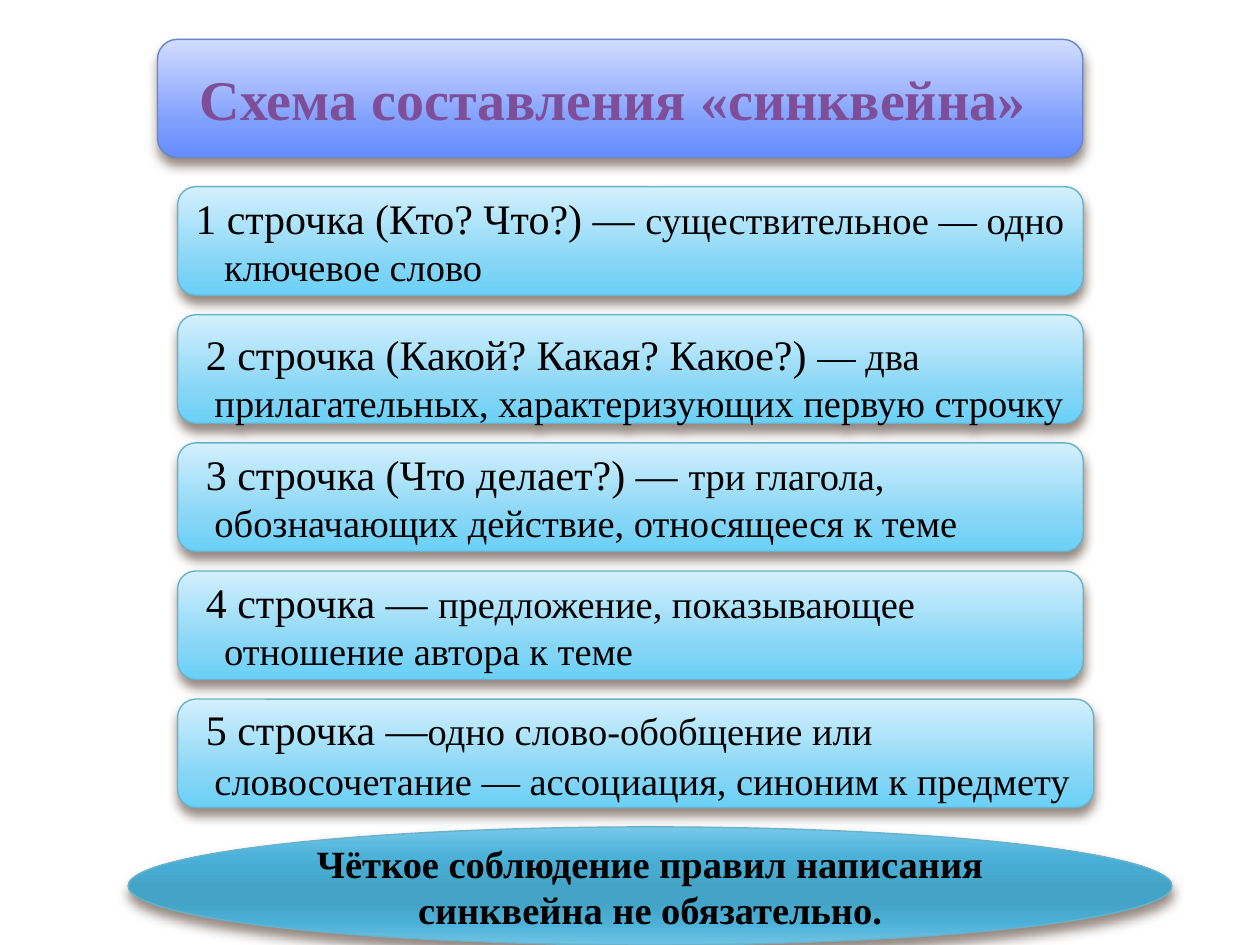
from pptx import Presentation
from pptx.dml.color import RGBColor
from pptx.enum.shapes import MSO_SHAPE
from pptx.enum.text import MSO_ANCHOR, PP_ALIGN
from pptx.oxml import parse_xml
from pptx.oxml.ns import nsdecls, qn
from pptx.util import Pt

ROUND, OVAL = MSO_SHAPE.ROUNDED_RECTANGLE, MSO_SHAPE.OVAL
MIDDLE = MSO_ANCHOR.MIDDLE
LEFT, CENTER = PP_ALIGN.LEFT, PP_ALIGN.CENTER

FONT = "Times New Roman"
BLACK = RGBColor(0x00, 0x00, 0x00)
PURPLE = RGBColor(0x7E, 0x4E, 0x99)
BLUE_LINE = RGBColor(0x65, 0x85, 0xCF)
TEAL_LINE = RGBColor(0x6B, 0xB1, 0xC9)
SHADOW = RGBColor(0x4E, 0x3B, 0x30)

# Gradient stops: position in percent, colour
TITLE_FILL = [(0, RGBColor(0xD2, 0xDC, 0xFF)), (72, RGBColor(0x7E, 0x9E, 0xFE)),
              (100, RGBColor(0x64, 0x8D, 0xFF))]
ROW_FILL = [(0, RGBColor(0xD3, 0xF0, 0xFD)), (72, RGBColor(0x84, 0xD5, 0xF6)),
            (100, RGBColor(0x6A, 0xD0, 0xF7))]
NOTE_FILL = [(0, RGBColor(0x76, 0xC8, 0xEA)), (25, RGBColor(0x4B, 0xB1, 0xD8)),
             (50, RGBColor(0x44, 0xA4, 0xC8)), (65, RGBColor(0x44, 0xA4, 0xC8)),
             (80, RGBColor(0x4B, 0xB0, 0xD6)), (100, RGBColor(0x6E, 0xC2, 0xE5))]

# Rows of the scheme: question, answer, second line, and format
ROWS = [
    ("1 строчка (Кто? Что?) — ", "существительное — одно",
     "ключевое слово", {"first": 0, "second": 16.5}),
    ("2 строчка (Какой? Какая? Какое?) ", "— два",
     "прилагательных, характеризующих первую строчку",
     {"margins": {"margin_top": Pt(9), "margin_bottom": Pt(0)}}),
    ("3 строчка (Что делает?) — ", "три глагола,",
     "обозначающих действие, относящееся к теме", {}),
    ("4 строчка — ", "предложение, показывающее",
     "отношение автора к теме", {"second": 16.5}),
    ("5 строчка —", "одно слово-обобщение или",
     "словосочетание — ассоциация, синоним к предмету",
     {"width": 523.5, "gap": 2}),
]
ROW_LEFT, ROW_TOP, ROW_WIDTH, ROW_HEIGHT, ROW_STEP = 101.5, 106.7, 517.5, 62, 73.2


def set_all(obj, values):
    for name, value in values.items():
        setattr(obj, name, value)


def set_gradient(sp, stops):
    """Fill a shape from top to bottom with any number of stops."""
    stop_xml = "".join(
        f'<a:gs pos="{pos * 1000}"><a:srgbClr val="{color}"/></a:gs>'
        for pos, color in stops)
    fill = parse_xml(
        f'<a:gradFill {nsdecls("a")} rotWithShape="1"><a:gsLst>{stop_xml}</a:gsLst>'
        '<a:lin ang="5400000" scaled="0"/></a:gradFill>')
    sp._element.spPr.find(qn("a:prstGeom")).addnext(fill)


def set_shadow(sp):
    sp.shadow.inherit = False
    effects = sp._element.spPr.find(qn("a:effectLst"))
    effects.append(parse_xml(
        f'<a:outerShdw {nsdecls("a")} blurRad="{Pt(6)}" dist="{Pt(4)}" '
        f'dir="5400000" rotWithShape="0"><a:srgbClr val="{SHADOW}">'
        '<a:alpha val="60000"/></a:srgbClr></a:outerShdw>'))


def add_panel(slide, kind, box, stops, line_color, margins):
    sp = slide.shapes.add_shape(kind, *map(Pt, box))
    sp.line.color.rgb = line_color
    sp.line.width = Pt(0.79)
    set_gradient(sp, stops)
    set_shadow(sp)
    tf = sp.text_frame
    set_all(tf, {"word_wrap": True, "vertical_anchor": MIDDLE, **margins})
    return tf


def add_run(p, text, size, color=BLACK, bold=False):
    r = p.add_run()
    r.text = text
    set_all(r.font, {"name": FONT, "size": Pt(size), "bold": bold})
    r.font.color.rgb = color


def add_caption(slide, kind, box, stops, line_color, text, size,
                color=BLACK, margins=None):
    """Add a panel with one bold centred paragraph."""
    tf = add_panel(slide, kind, box, stops, line_color, margins or {})
    p = tf.paragraphs[0]
    p.alignment = CENTER
    add_run(p, text, size, color, True)


def add_indented(p, indent, gap=0):
    set_all(p, {"alignment": LEFT, "space_before": Pt(gap)})
    p._p.get_or_add_pPr().set("marL", str(Pt(indent)))


def add_row(slide, index, question, answer, second_line, fmt):
    box = (ROW_LEFT, ROW_TOP + index * ROW_STEP,
           fmt.get("width", ROW_WIDTH), ROW_HEIGHT)
    tf = add_panel(slide, ROUND, box, ROW_FILL, TEAL_LINE, fmt.get("margins", {}))
    p = tf.paragraphs[0]
    add_indented(p, fmt.get("first", 6))
    add_run(p, question, 24)
    add_run(p, answer, 22)
    p = tf.add_paragraph()
    add_indented(p, fmt.get("second", 11), fmt.get("gap", 0))
    add_run(p, second_line, 22)


def main():
    prs = Presentation()
    set_all(prs, {"slide_width": Pt(720), "slide_height": Pt(540)})
    slide = prs.slides.add_slide(prs.slide_layouts[6])

    # Title
    add_caption(slide, ROUND, (90, 22.5, 528.75, 67.5), TITLE_FILL, BLUE_LINE,
                "Схема составления «синквейна»", 32, PURPLE,
                {"margin_right": Pt(15.2)})

    # Five rows of the scheme
    for index, row in enumerate(ROWS):
        add_row(slide, index, *row)

    # Closing note
    add_caption(slide, OVAL, (73.2, 472.5, 596.5, 67.5), NOTE_FILL, TEAL_LINE,
                "Чёткое соблюдение правил написания синквейна не обязательно.", 22)

    prs.save("out.pptx")


if __name__ == "__main__":
    main()
